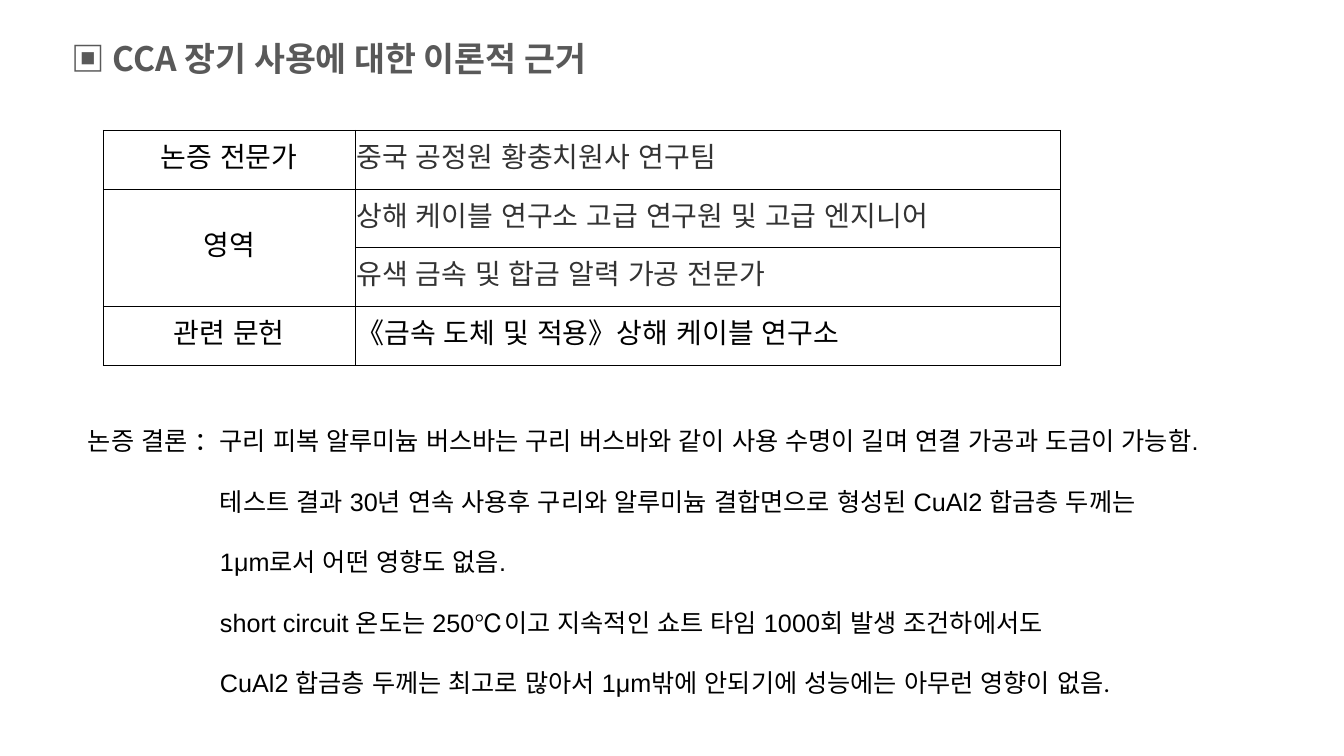
from dataclasses import dataclass

from lxml import etree
from pptx import Presentation
from pptx.dml.color import RGBColor
from pptx.enum.text import MSO_ANCHOR, MSO_AUTO_SIZE, PP_ALIGN
from pptx.oxml.ns import qn
from pptx.util import Cm, Pt

TOP, MIDDLE = MSO_ANCHOR.TOP, MSO_ANCHOR.MIDDLE
LEFT, CENTER = PP_ALIGN.LEFT, PP_ALIGN.CENTER
NO_AUTOFIT = MSO_AUTO_SIZE.NONE

COLORS = {"heading": "595959", "text": "000000", "soft": "333333", "border": "000000"}
HEADING_FONT, TEXT_FONT, ACCENT_FONT = "Noto Sans CJK KR", "Arial", "Calibri"
COLUMN_WIDTHS = (Cm(6.35), Cm(17.78))
ROW_HEIGHT = Cm(1.48)
CONCLUSION_INDENT = Cm(3.33)


@dataclass(frozen=True)
class Span:
    text: str
    font: str = TEXT_FONT
    size: int = 18
    color: str = "text"
    bold: bool = False


@dataclass(frozen=True)
class EvidenceRow:
    label: str
    detail: str
    color: str = "soft"


@dataclass(frozen=True)
class Line:
    spans: tuple[Span, ...]
    indent: int = CONCLUSION_INDENT


HEADING = Span("▣ CCA 장기 사용에 대한 이론적 근거", HEADING_FONT, 24, "heading", True)

EVIDENCE = (
    EvidenceRow("논증 전문가", "중국 공정원 황충치원사 연구팀"),
    EvidenceRow("영역", "상해 케이블 연구소 고급 연구원 및 고급 엔지니어"),
    EvidenceRow("", "유색 금속 및 합금 알력 가공 전문가"),
    EvidenceRow("관련 문헌", "《금속 도체 및 적용》상해 케이블 연구소", "text"),
)

CONCLUSION = (
    Line((Span("논증 결론 ：구리 피복 알루미늄 버스바는 구리 버스바와 같이 "
               "사용 수명이 길며 연결 가공과 도금이 가능함."),), 0),
    Line((Span("테스트 결과 30년 연속 사용후 구리와 알루미늄 결합면으로 "
               "형성된 CuAl2 합금층 두께는"),)),
    Line((Span("1μm로서 어떤 영향도 없음."),)),
    Line((Span("short circuit 온도는 250℃이고 지속적인 쇼트 타임 "
               "1000회 발생 조건하에서도"),)),
    Line((Span("CuAl2 "), Span("합", ACCENT_FONT),
          Span("금층 두께는 최고로 많아서 1μm밖에 안되기에 성능에는 아무런 영향이 없음"),
          Span(".", ACCENT_FONT))),
)


def add_span(para, span: Span) -> None:
    run = para.add_run()
    run.text = span.text
    run.font.name = span.font
    run.font.size = Pt(span.size)
    run.font.bold = span.bold
    run.font.color.rgb = RGBColor.from_string(COLORS[span.color])
    east_asian = etree.SubElement(run.font._element, qn("a:ea"))
    east_asian.set("typeface", span.font)


def place(box, left: int, top: int, width: int, height: int):
    box.left, box.top, box.width, box.height = left, top, width, height
    frame = box.text_frame
    frame.word_wrap = True
    frame.auto_size = NO_AUTOFIT
    frame.vertical_anchor = TOP
    return frame


def add_borders(cell) -> None:
    properties = cell._tc.get_or_add_tcPr()
    for side in ("a:lnL", "a:lnR", "a:lnT", "a:lnB"):
        border = etree.SubElement(properties, qn(side), w=str(Pt(0.5)))
        fill = etree.SubElement(border, qn("a:solidFill"))
        etree.SubElement(fill, qn("a:srgbClr"), val=COLORS["border"])


def format_cell(cell, text: str, color: str, align) -> None:
    cell.margin_left = cell.margin_top = cell.margin_right = Cm(0.03)
    cell.margin_bottom = Cm(0.13)
    cell.vertical_anchor = MIDDLE
    add_borders(cell)
    cell.fill.background()
    para = cell.text_frame.paragraphs[0]
    para.alignment = align
    if text:
        add_span(para, Span(text, size=20, color=color))


def add_heading(page) -> None:
    frame = place(page.shapes.title, Cm(1.55), Cm(0.84), Cm(27.15), Cm(1.27))
    para = frame.paragraphs[0]
    para.alignment = LEFT
    add_span(para, HEADING)


def add_evidence(page) -> None:
    table = page.shapes.add_table(
        len(EVIDENCE), len(COLUMN_WIDTHS), Cm(2.6), Cm(3.28),
        sum(COLUMN_WIDTHS), ROW_HEIGHT * len(EVIDENCE)).table
    table.first_row = table.horz_banding = False
    for column, width in zip(table.columns, COLUMN_WIDTHS):
        column.width = width
    for index, row in enumerate(EVIDENCE):
        table.rows[index].height = ROW_HEIGHT
        format_cell(table.cell(index, 0), row.label, "text", CENTER)
        format_cell(table.cell(index, 1), row.detail, row.color, LEFT)
    table.cell(1, 0).merge(table.cell(2, 0))


def add_conclusion(page) -> None:
    frame = place(page.placeholders[1], Cm(1.96), Cm(9.83), Cm(31.3), Cm(8.71))
    for index, line in enumerate(CONCLUSION):
        para = frame.add_paragraph() if index else frame.paragraphs[0]
        properties = para._p.get_or_add_pPr()
        properties.set("marL", str(line.indent))
        properties.set("indent", "0")
        etree.SubElement(properties, qn("a:buNone"))
        para.alignment = LEFT
        para.line_spacing = 2.0
        para.space_before = Pt(0)
        for span in line.spans:
            add_span(para, span)


def main() -> None:
    deck = Presentation()
    deck.slide_width, deck.slide_height = Cm(33.87), Cm(19.05)
    page = deck.slides.add_slide(deck.slide_layouts[1])
    add_heading(page)
    add_evidence(page)
    add_conclusion(page)
    deck.save("out.pptx")


if __name__ == "__main__":
    main()
